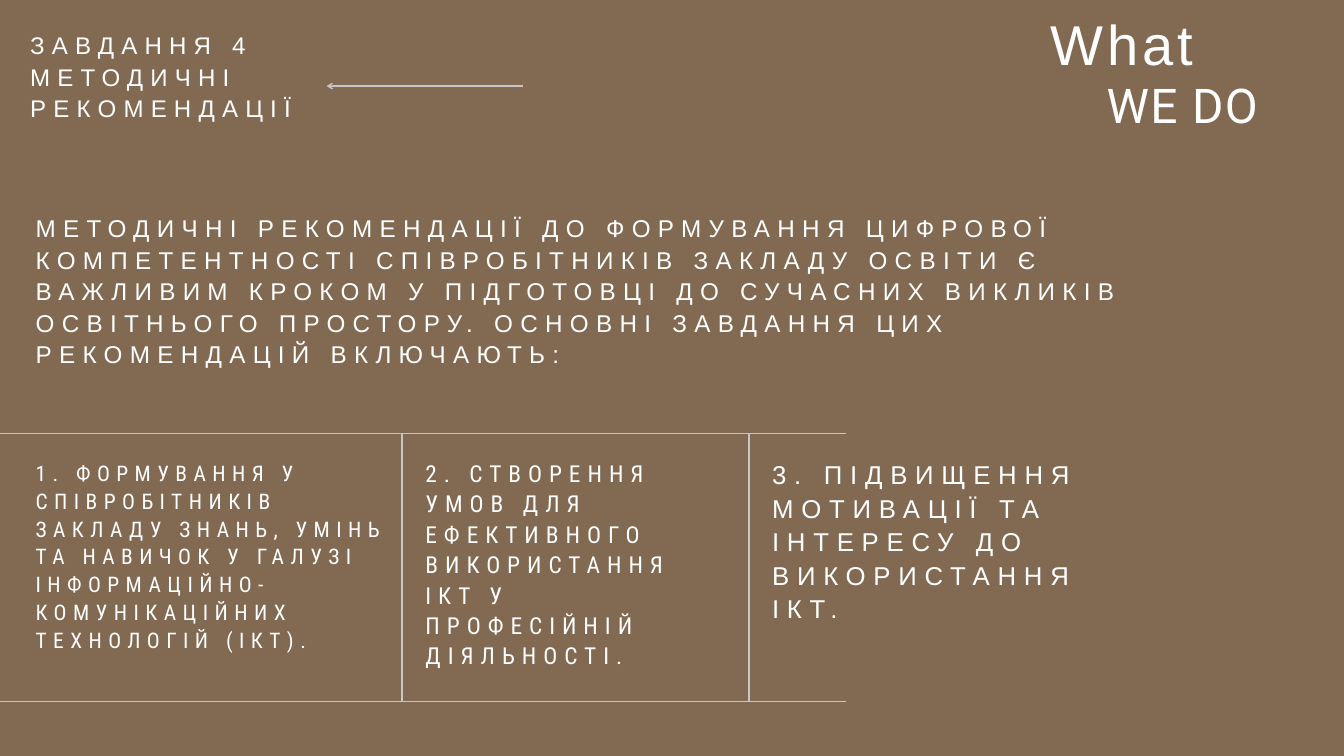
from lxml import etree
from pptx import Presentation
from pptx.dml.color import RGBColor
from pptx.enum import shapes, text
from pptx.oxml import ns
from pptx.util import Pt

BROWN = RGBColor(0x81, 0x69, 0x52)
WHITE = RGBColor(0xFF, 0xFF, 0xFF)
GREY = RGBColor(0xC6, 0xC6, 0xC6)

SLIDE_WIDTH, SLIDE_HEIGHT = 1440, 810
RULE_WEIGHT = 1.5
TABLE_TOP, TABLE_BOTTOM, TABLE_RIGHT = 464.4, 751.4, 906.5
DIVIDERS = (430.9, 802.4)
ARROW_TIP, ARROW_END, ARROW_Y = 349.9, 560.9, 92.2

FRAME_FORMAT = {
    "margin_left": 0,
    "margin_top": 0,
    "margin_right": 0,
    "margin_bottom": 0,
    "word_wrap": True,
    "auto_size": text.MSO_AUTO_SIZE.SHAPE_TO_FIT_TEXT,
    "vertical_anchor": text.MSO_ANCHOR.TOP,
}

# wording, (left, top, width, height), font, size, line spacing, letter spacing
PASSAGES = [
    ("What", (1125.4, 10.8, 275, 83.5), "Arial", 60.1, 70.9, 4.3),
    ("WE DO", (1185.8, 82.1, 234.7, 72.7), "Roboto", 51.3, 60.5, 1.4),
    ("ЗАВДАННЯ 4 МЕТОДИЧНІ РЕКОМЕНДАЦІЇ",
     (32.4, 30.2, 327.6, 105.1), "Arial", 25.8, 33.6, 7.7),
    ("МЕТОДИЧНІ РЕКОМЕНДАЦІЇ ДО ФОРМУВАННЯ ЦИФРОВОЇ КОМПЕТЕНТНОСТІ "
     "СПІВРОБІТНИКІВ ЗАКЛАДУ ОСВІТИ Є ВАЖЛИВИМ КРОКОМ У ПІДГОТОВЦІ ДО "
     "СУЧАСНИХ ВИКЛИКІВ ОСВІТНЬОГО ПРОСТОРУ. ОСНОВНІ ЗАВДАННЯ ЦИХ "
     "РЕКОМЕНДАЦІЙ ВКЛЮЧАЮТЬ:",
     (38.2, 226.1, 1191.6, 173.5), "Arial", 26, 33.8, 7.8),
    ("1. ФОРМУВАННЯ У СПІВРОБІТНИКІВ ЗАКЛАДУ ЗНАНЬ, УМІНЬ ТА НАВИЧОК У "
     "ГАЛУЗІ ІНФОРМАЦІЙНО-КОМУНІКАЦІЙНИХ ТЕХНОЛОГІЙ (ІКТ).",
     (38.2, 490.3, 393.8, 238.3), "Roboto Condensed", 23, 29.9, 6.9),
    ("2. СТВОРЕННЯ УМОВ ДЛЯ ЕФЕКТИВНОГО ВИКОРИСТАННЯ ІКТ У ПРОФЕСІЙНІЙ "
     "ДІЯЛЬНОСТІ.",
     (455.8, 489.6, 294.5, 230.4), "Roboto Condensed", 25, 32.5, 7.5),
    ("3. ПІДВИЩЕННЯ МОТИВАЦІЇ ТА ІНТЕРЕСУ ДО ВИКОРИСТАННЯ ІКТ.",
     (827.3, 488.9, 331.2, 216.7), "Arial", 27.6, 35.9, 8.3),
]


def add_rule(slide, *ends):
    rule = slide.shapes.add_connector(
        shapes.MSO_CONNECTOR.STRAIGHT, *(Pt(end) for end in ends))
    rule.line.color.rgb = GREY
    rule.line.width = Pt(RULE_WEIGHT)
    etree.SubElement(rule._element.spPr, ns.qn("a:effectLst"))
    return rule


def add_passage(slide, wording, box, font_name, size, leading, tracking):
    frame = slide.shapes.add_textbox(*(Pt(length) for length in box)).text_frame
    for name, value in FRAME_FORMAT.items():
        setattr(frame, name, value)
    paragraph = frame.paragraphs[0]
    paragraph.line_spacing = Pt(leading)
    paragraph.alignment = text.PP_ALIGN.LEFT
    run = paragraph.add_run()
    run.text = wording
    for name, value in {"name": font_name, "size": Pt(size)}.items():
        setattr(run.font, name, value)
    run.font.color.rgb = WHITE
    run._r.get_or_add_rPr().set("spc", str(round(tracking * 100)))


def main():
    deck = Presentation()
    deck.slide_width, deck.slide_height = Pt(SLIDE_WIDTH), Pt(SLIDE_HEIGHT)
    slide = deck.slides.add_slide(deck.slide_layouts[6])
    background = slide.background.fill
    background.solid()
    background.fore_color.rgb = BROWN

    for y in (TABLE_TOP, TABLE_BOTTOM):
        add_rule(slide, 0, y, TABLE_RIGHT, y)
    for x in DIVIDERS:
        add_rule(slide, x, TABLE_BOTTOM, x, TABLE_TOP)
    arrow = add_rule(slide, ARROW_TIP, ARROW_Y, ARROW_END, ARROW_Y)
    etree.SubElement(arrow.line._get_or_add_ln(), ns.qn("a:headEnd"), type="arrow")

    for passage in PASSAGES:
        add_passage(slide, *passage)
    deck.save("out.pptx")


if __name__ == "__main__":
    main()
